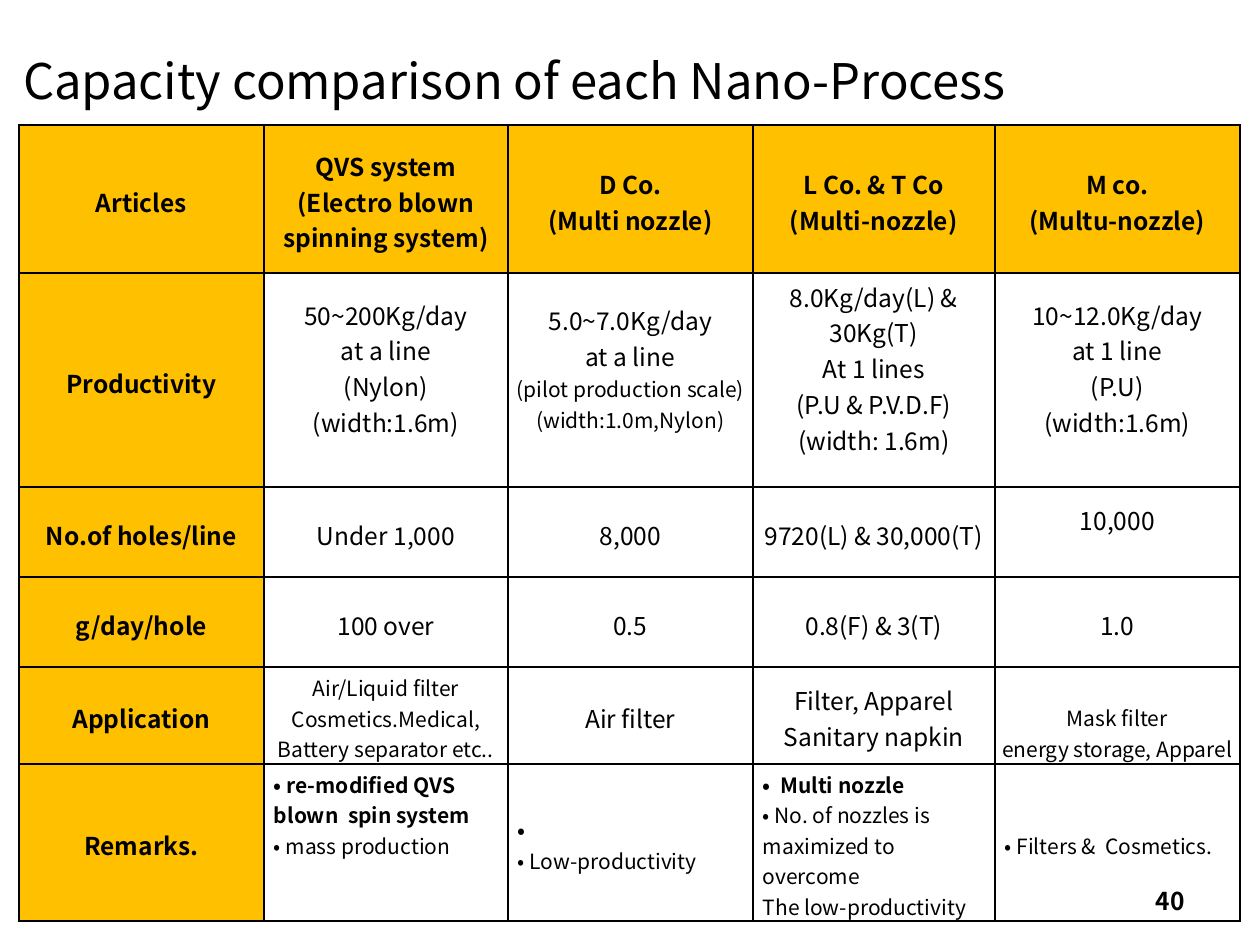
"""Build the slide comparing the capacity of nano-fibre processes."""
from dataclasses import dataclass

from lxml.etree import SubElement
from pptx import Presentation
from pptx.dml.color import RGBColor
from pptx.enum.text import MSO_ANCHOR, MSO_AUTO_SIZE, PP_ALIGN
from pptx.oxml.ns import qn
from pptx.util import Emu, Pt

EMU_PER_PX = 914400 // 126


@dataclass(frozen=True)
class Theme:
    font: str = "Noto Sans CJK KR"
    ink: str = "000000"
    accent: str = "FFC000"
    title: int = 28
    body: int = 14
    small: int = 12
    border: float = 1


@dataclass(frozen=True)
class Entry:
    text: str
    small_from: int = 99
    bold_lines: int = 0
    space_above: int = 0
    space_below: int = 0


@dataclass(frozen=True)
class Row:
    label: str
    height: int
    entries: tuple[Entry, ...]
    heading: bool = False
    remarks: bool = False


THEME = Theme()
COLUMN_WIDTHS = (245, 244, 245, 242, 245)
ROWS = (
    Row("Articles", 148, (
        Entry("QVS system\n(Electro blown spinning system)"),
        Entry("D Co.\n(Multi nozzle)"),
        Entry("L Co. & T Co\n(Multi-nozzle)"),
        Entry("M co.\n(Multu-nozzle)"),
    ), heading=True),
    Row("Productivity", 214, (
        Entry("50~200Kg/day\nat a line\n(Nylon)\n(width:1.6m)", space_below=29),
        Entry("5.0~7.0Kg/day\nat a line\n(pilot production scale)\n(width:1.0m,Nylon)",
              small_from=2, space_below=29),
        Entry("8.0Kg/day(L) & 30Kg(T)\nAt 1 lines\n(P.U & P.V.D.F)\n(width: 1.6m)",
              space_below=29),
        Entry("10~12.0Kg/day\nat 1 line\n(P.U)\n(width:1.6m)", space_below=29),
    )),
    Row("No.of holes/line", 90, (
        Entry("Under 1,000"),
        Entry("8,000"),
        Entry("9720(L) & 30,000(T)"),
        Entry("10,000", space_below=30),
    )),
    Row("g/day/hole", 90, (
        Entry("100 over"),
        Entry("0.5"),
        Entry("0.8(F) & 3(T)"),
        Entry("1.0"),
    )),
    Row("Application", 97, (
        Entry("Air/Liquid filter\nCosmetics.Medical,\nBattery separator etc..", small_from=0),
        Entry("Air filter"),
        Entry("Filter, Apparel\nSanitary napkin"),
        Entry("Mask filter\nenergy storage, Apparel", small_from=0, space_above=30),
    )),
    Row("Remarks.", 156, (
        Entry("• re-modified QVS blown  spin system\n• mass production",
              small_from=0, bold_lines=1, space_below=61),
        Entry("•\n• Low-productivity", small_from=0, bold_lines=1),
        Entry("•  Multi nozzle\n• No. of nozzles is maximized to overcome\nThe low-productivity",
              small_from=0, bold_lines=1),
        Entry("• Filters &  Cosmetics.", small_from=0),
    ), remarks=True),
)


def px(length: int) -> Emu:
    """Turn pixels into EMU."""
    return Emu(length * EMU_PER_PX)


def write(paragraph, text: str, *, size: int, bold: bool = False, align=PP_ALIGN.LEFT) -> None:
    """Put formatted text into a paragraph."""
    paragraph.alignment = align
    run = paragraph.add_run()
    run.text = text
    run.font.name = THEME.font
    run.font.size = Pt(size)
    run.font.bold = bold
    run.font.color.rgb = RGBColor.from_string(THEME.ink)


def outline(cell) -> None:
    """Draw the four borders of a cell."""
    properties = cell._tc.get_or_add_tcPr()
    for side in ("lnL", "lnR", "lnT", "lnB"):
        line = SubElement(properties, qn(f"a:{side}"), w=str(Pt(THEME.border)))
        SubElement(SubElement(line, qn("a:solidFill")), qn("a:srgbClr"), val=THEME.ink)


def fill_cell(cell, entry: Entry, *, bold: bool, accent: bool, remarks: bool = False) -> None:
    """Format one table cell and write its lines."""
    outline(cell)
    if accent:
        cell.fill.solid()
        cell.fill.fore_color.rgb = RGBColor.from_string(THEME.accent)
    else:
        cell.fill.background()
    cell.vertical_anchor = MSO_ANCHOR.MIDDLE
    cell.margin_left = px(10 if remarks else 0)
    cell.margin_right = 0
    cell.margin_top = px(5 + entry.space_above)
    cell.margin_bottom = px(entry.space_below)
    frame = cell.text_frame
    for index, text in enumerate(entry.text.split("\n")):
        paragraph = frame.add_paragraph() if index else frame.paragraphs[0]
        write(paragraph, text,
              size=THEME.small if index >= entry.small_from else THEME.body,
              bold=bold or index < entry.bold_lines,
              align=PP_ALIGN.LEFT if remarks else PP_ALIGN.CENTER)


def add_title(slide, text: str) -> None:
    """Place and format the title placeholder."""
    title = slide.shapes.title
    title.left, title.top, title.width, title.height = px(0), px(10), px(1153), px(134)
    frame = title.text_frame
    frame.auto_size = MSO_AUTO_SIZE.NONE
    frame.vertical_anchor = MSO_ANCHOR.MIDDLE
    frame.margin_left = px(23)
    frame.paragraphs[0].line_spacing = 1.1
    write(frame.paragraphs[0], text, size=THEME.title)


def add_comparison(slide) -> None:
    """Add the comparison table."""
    table = slide.shapes.add_table(
        len(ROWS), len(COLUMN_WIDTHS), px(19), px(125),
        px(sum(COLUMN_WIDTHS)), px(sum(row.height for row in ROWS))).table
    table.first_row = table.horz_banding = False
    for column, width in zip(table.columns, COLUMN_WIDTHS):
        column.width = px(width)
    for table_row, row in zip(table.rows, ROWS):
        table_row.height = px(row.height)
        label_cell, *entry_cells = table_row.cells
        fill_cell(label_cell, Entry(row.label), bold=True, accent=True)
        for cell, entry in zip(entry_cells, row.entries):
            fill_cell(cell, entry, bold=row.heading, accent=row.heading, remarks=row.remarks)


def add_page_number(slide, number: str) -> None:
    """Add the page number at the lower right."""
    frame = slide.shapes.add_textbox(px(903), px(876), px(294), px(50)).text_frame
    frame.word_wrap = True
    frame.vertical_anchor = MSO_ANCHOR.MIDDLE
    write(frame.paragraphs[0], number, size=THEME.body, bold=True, align=PP_ALIGN.RIGHT)


def main() -> None:
    """Build and save the presentation."""
    presentation = Presentation()
    presentation.slide_width, presentation.slide_height = px(1260), px(945)
    slide = presentation.slides.add_slide(presentation.slide_layouts[5])
    add_title(slide, "Capacity comparison of each Nano-Process")
    add_comparison(slide)
    add_page_number(slide, "40")
    presentation.save("out.pptx")


if __name__ == "__main__":
    main()
